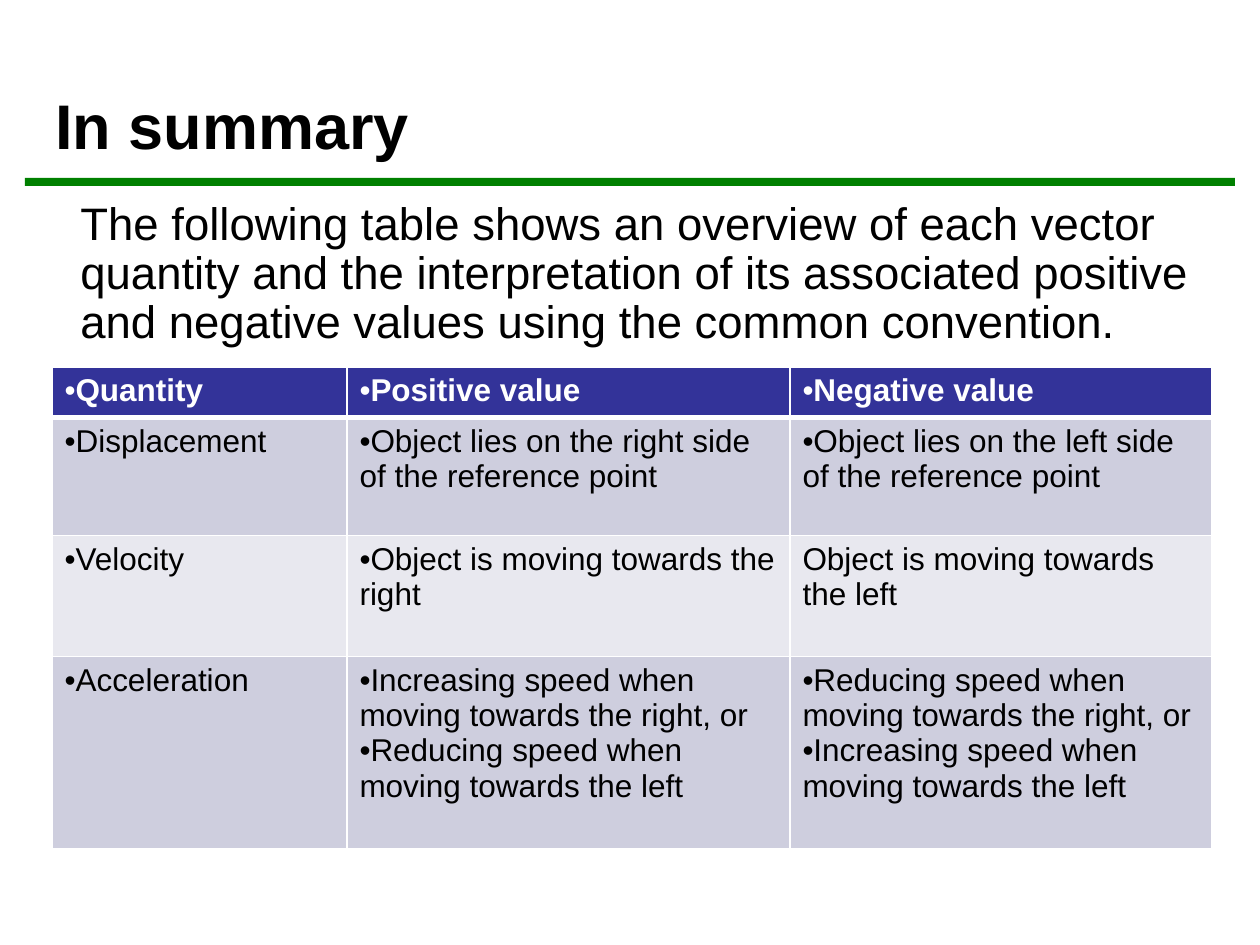
from lxml import etree
from pptx import Presentation
from pptx import util as u
from pptx.dml.color import RGBColor
from pptx.enum import shapes, text
from pptx.oxml.ns import qn

PX = u.Inches(1) // 126
BLACK = RGBColor(0, 0, 0)
WHITE = RGBColor(255, 255, 255)
GREEN = RGBColor(0, 128, 0)
NAVY = RGBColor(0x33, 0x33, 0x99)
LAVENDER = RGBColor(0xCE, 0xCE, 0xDE)
PALE = RGBColor(0xE8, 0xE8, 0xEF)

INTRO = (
    "The following table shows an overview of each vector quantity and the "
    "interpretation of its associated positive and negative values using the "
    "common convention."
)
COLUMN_WIDTHS = [295, 443, 422]
ROW_HEIGHTS = [47, 118, 121, 192]
QUANTITIES = [
    ["•Quantity", "•Positive value", "•Negative value"],
    ["•Displacement",
     "•Object lies on the right side of the reference point",
     "•Object lies on the left side of the reference point"],
    ["•Velocity",
     "•Object is moving towards the right",
     "Object is moving towards the left"],
    ["•Acceleration",
     "•Increasing speed when moving towards the right, or\n"
     "•Reducing speed when moving towards the left",
     "•Reducing speed when moving towards the right, or\n"
     "•Increasing speed when moving towards the left"],
]


def scaled(*lengths):
    """Turn px lengths into EMU."""
    return [length * PX for length in lengths]


def style(paragraph, size, color, bold=False):
    """Set the font of a whole paragraph."""
    font = paragraph.font
    font.name, font.size, font.bold = "Arial", u.Pt(size), bold
    font.color.rgb = color


def add_words(slide, box, words, size, bold=False, anchor=text.MSO_ANCHOR.TOP):
    """Place one wrapped paragraph in a box and return it."""
    frame = slide.shapes.add_textbox(*scaled(*box)).text_frame
    frame.word_wrap = True
    frame.vertical_anchor = anchor
    paragraph = frame.paragraphs[0]
    paragraph.text = words
    style(paragraph, size, BLACK, bold)
    return paragraph


def add_heading(slide, box):
    """Place the title above the green rule along the bottom of the box."""
    left, top, width, height = box
    add_words(slide, (left + 18, top, width - 29, height - 18), "In summary",
              36, True, text.MSO_ANCHOR.BOTTOM)
    rule = slide.shapes.add_shape(
        shapes.MSO_SHAPE.RECTANGLE, *scaled(left, top + height - 8, width, 8))
    rule.shadow.inherit = False
    rule.fill.solid()
    rule.fill.fore_color.rgb = GREEN
    rule.line.fill.background()


def add_intro(slide, box):
    """Place the introductory sentence."""
    add_words(slide, box, INTRO, 26).line_spacing = 0.9


def add_bullet(paragraph):
    """Put a bullet directly before the words of a paragraph."""
    properties = paragraph._p.get_or_add_pPr()
    properties.set("marL", "0")
    properties.set("indent", "0")
    etree.SubElement(properties, qn("a:buFont"), typeface="Arial")
    etree.SubElement(properties, qn("a:buChar"), char="•")


def add_borders(cell, bottom_width):
    """Draw white borders round a cell, ahead of its fill."""
    properties = cell._tc.get_or_add_tcPr()
    for position, side in enumerate(("lnL", "lnR", "lnT", "lnB")):
        width = bottom_width if side == "lnB" else 1
        border = etree.Element(qn(f"a:{side}"), w=str(u.Pt(width)))
        fill = etree.SubElement(border, qn("a:solidFill"))
        etree.SubElement(fill, qn("a:srgbClr"), val=str(WHITE))
        properties.insert(position, border)


def fill_cell(cell, words, row):
    """Write, bullet and colour one cell according to its row."""
    header = row == 0
    cell.text = words.replace("•", "")
    for line, paragraph in zip(words.split("\n"), cell.text_frame.paragraphs):
        if line.startswith("•"):
            add_bullet(paragraph)
        style(paragraph, 18, WHITE if header else BLACK, header)
    cell.fill.solid()
    cell.fill.fore_color.rgb = NAVY if header else LAVENDER if row % 2 else PALE
    add_borders(cell, 3 if header else 1)


def add_quantities(slide, left, top):
    """Place the table of vector quantities from its top left corner."""
    table = slide.shapes.add_table(
        len(ROW_HEIGHTS), len(COLUMN_WIDTHS),
        *scaled(left, top, sum(COLUMN_WIDTHS), sum(ROW_HEIGHTS))).table
    for column, width in zip(table.columns, scaled(*COLUMN_WIDTHS)):
        column.width = width
    for row, height in zip(table.rows, scaled(*ROW_HEIGHTS)):
        row.height = height
    for row, entries in enumerate(QUANTITIES):
        for column, words in enumerate(entries):
            fill_cell(table.cell(row, column), words, row)


def main():
    """Build and save the summary slide."""
    deck = Presentation()
    deck.slide_width, deck.slide_height = scaled(1260, 945)
    slide = deck.slides.add_slide(deck.slide_layouts[6])
    add_heading(slide, (25, 21, 1210, 165))
    add_quantities(slide, 52, 367)
    add_intro(slide, (68, 195, 1144, 161))
    deck.save("out.pptx")


if __name__ == "__main__":
    main()
